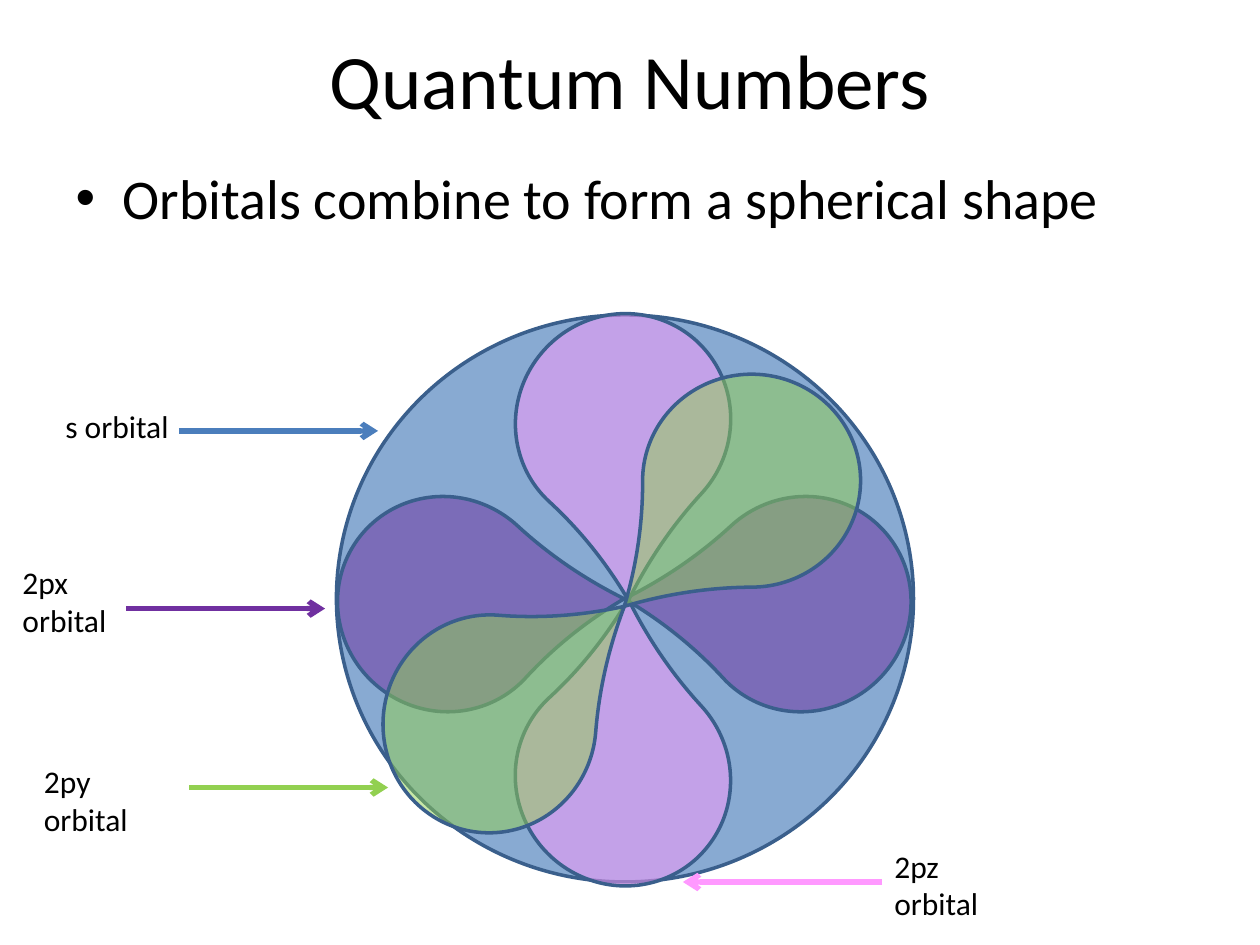
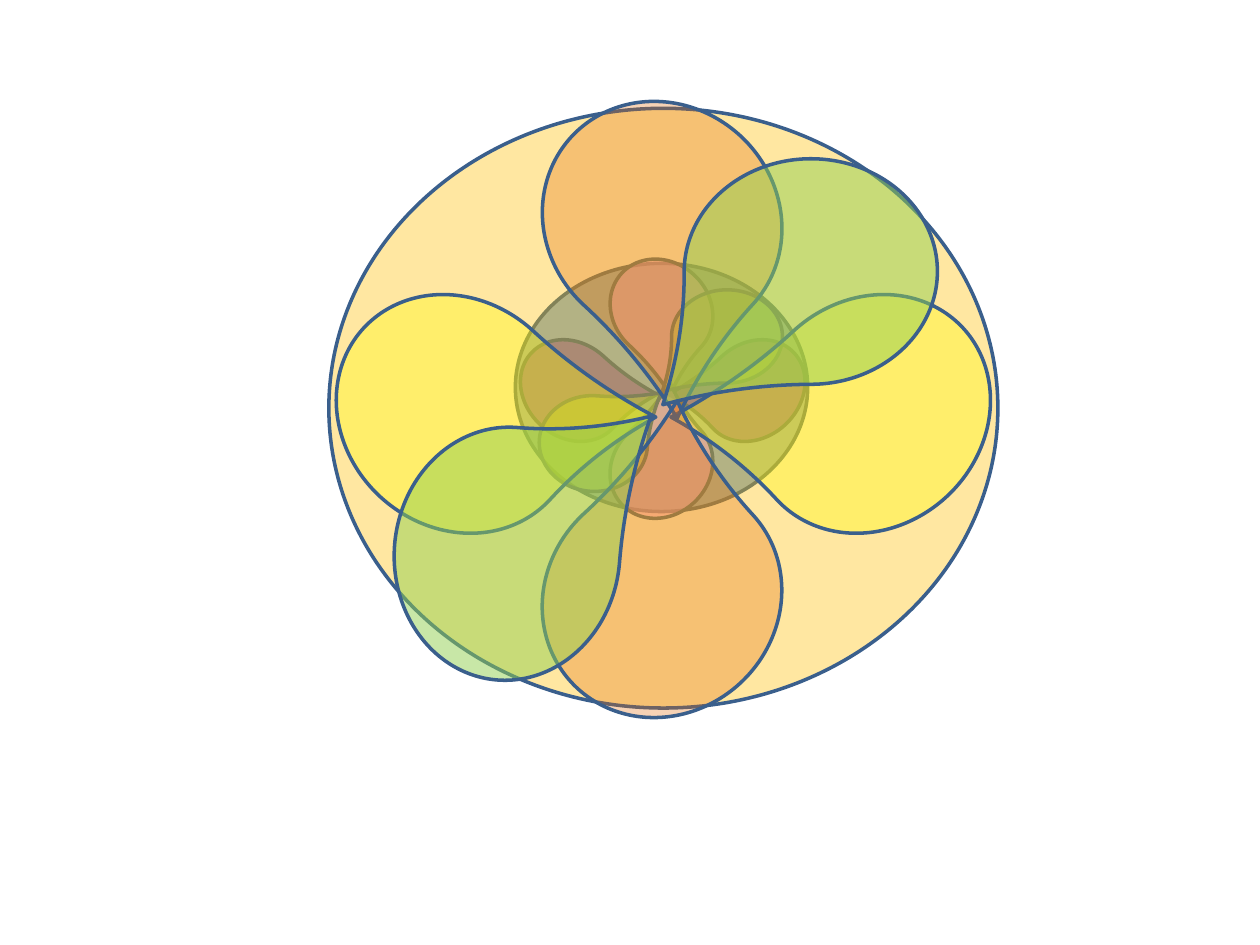
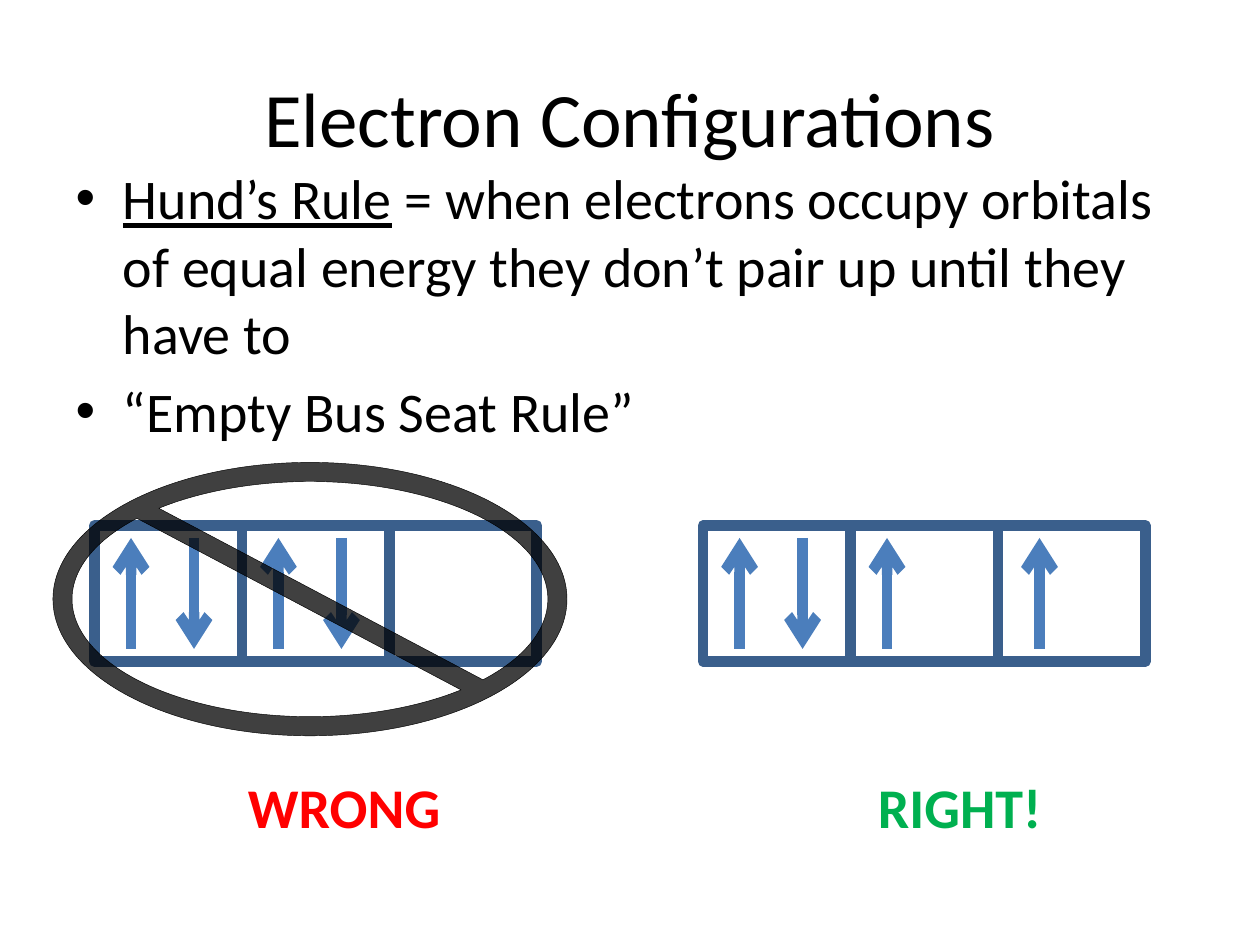
from lxml import etree
from pptx import Presentation
from pptx.dml.color import RGBColor
from pptx.enum.shapes import MSO_CONNECTOR, MSO_SHAPE
from pptx.enum.text import MSO_ANCHOR, PP_ALIGN
from pptx.oxml.ns import qn
from pptx.util import Inches, Pt

ELLIPSE = MSO_SHAPE.OVAL
TEARDROP = MSO_SHAPE.TEAR
RECTANGLE = MSO_SHAPE.RECTANGLE
NO_SYMBOL = MSO_SHAPE.NO_SYMBOL
STRAIGHT = MSO_CONNECTOR.STRAIGHT
CENTER = PP_ALIGN.CENTER
MIDDLE = MSO_ANCHOR.MIDDLE

FONT = "Calibri"
COLORS = {
    "black": "000000", "white": "FFFFFF", "outline": "3A5F8C",
    "blue": "4F81BD", "arrow": "4B7EBC", "purple": "7030A0",
    "pink": "FF99FF", "green": "92D050", "gold": "FFC000",
    "yellow": "FFFF00", "orange": "E46C0A", "wrong": "FF0000",
    "right": "00B050",
}
LOBE_TURNS = {"x": (42.6, 317.4), "z": (132.6, 47.4), "y": (179.7, 94.6)}
CONTENT_LAYOUT, BLANK_LAYOUT = 1, 6


def rgb(name):
    return RGBColor.from_string(COLORS[name])


class SlideBuilder:
    def __init__(self, deck):
        self.deck = deck
        self.page = None

    def new_page(self, layout):
        self.page = self.deck.slides.add_slide(self.deck.slide_layouts[layout])

    def format_span(self, span, size, color="black", bold=None):
        span.font.name = FONT
        span.font.size = Pt(size)
        span.font.color.rgb = rgb(color)
        span.font.bold = bold

    def place(self, item, left, top, width, height):
        item.left, item.top = Inches(left), Inches(top)
        item.width, item.height = Inches(width), Inches(height)

    def title(self, text, top):
        box = self.page.shapes.title
        self.place(box, 0.5, top, 9, 1.25)
        box.text_frame.text = text
        box.text_frame.vertical_anchor = MIDDLE
        para = box.text_frame.paragraphs[0]
        para.alignment = CENTER
        self.format_span(para.runs[0], 44)

    def bullets(self, items, height):
        box = self.page.placeholders[1]
        self.place(box, 0.5, 1.25, 9, height)
        frame = box.text_frame
        for index, (term, text) in enumerate(items):
            para = frame.add_paragraph() if index else frame.paragraphs[0]
            for part in filter(None, (term, text)):
                span = para.add_run()
                span.text = part
                self.format_span(span, 32)
                if part == term:
                    span.font.underline = True

    def label(self, text, left, top, width, height, size=18, color="black", bold=None):
        box = self.page.shapes.add_textbox(
            Inches(left), Inches(top), Inches(width), Inches(height))
        box.text_frame.word_wrap = True
        box.text_frame.text = text
        self.format_span(box.text_frame.paragraphs[0].runs[0], size, color, bold)

    def shape(self, kind, area, fill, opacity=100, line="outline", weight=2):
        shape = self.page.shapes.add_shape(kind, *map(Inches, area))
        shape.shadow.inherit = False
        shape.fill.solid()
        shape.fill.fore_color.rgb = rgb(fill)
        if opacity < 100:
            tint = shape.element.spPr.find(".//" + qn("a:srgbClr"))
            etree.SubElement(tint, qn("a:alpha")).set("val", str(opacity * 1000))
        shape.line.color.rgb = rgb(line)
        shape.line.width = Pt(weight)
        return shape

    def arrow(self, start, end, color, weight):
        arrow = self.page.shapes.add_connector(
            STRAIGHT, *map(Inches, start + end))
        arrow.line.color.rgb = rgb(color)
        arrow.line.width = Pt(weight)
        line = arrow.line._get_or_add_ln()
        etree.SubElement(line, qn("a:tailEnd")).set("type", "arrow")
        etree.SubElement(arrow.element.spPr, qn("a:effectLst"))

    def orbital(self, axis, corners, sizes, color, opacity=50):
        for index, corner in enumerate(corners):
            lobe = self.shape(TEARDROP, corner + sizes[index], color, opacity)
            lobe.adjustments[0] = 1.174
            lobe.rotation = LOBE_TURNS[axis][index]
            if index:
                lobe.element.spPr.find(qn("a:xfrm")).set("flipH", "1")

    def atom(self, sphere, color, opacity, orbitals):
        self.shape(ELLIPSE, sphere, color, opacity)
        for orbital in orbitals:
            self.orbital(*orbital)

    def electron_boxes(self, left, electrons):
        width, top, height = 1.17, 4.17, 1.08
        for index, offsets in enumerate(electrons):
            box_left = left + index * width
            self.shape(RECTANGLE, (box_left, top, width, height), "white", weight=6)
            for position, offset in enumerate(offsets):
                low = (box_left + offset, 5.15)
                high = (box_left + offset, 4.27)
                start, end = (high, low) if position else (low, high)
                self.arrow(start, end, "arrow", 6)


def quantum_numbers(builder):
    builder.new_page(CONTENT_LAYOUT)
    builder.title("Quantum Numbers", 0)
    builder.bullets([("", "Orbitals combine to form a spherical shape")], 5.45)
    sizes = ((1.73, 1.69),) * 2
    builder.atom((2.67, 2.5, 4.58, 4.5), "blue", 67, [
        ("x", ((2.67, 3.95), (5.51, 3.95)), sizes, "purple"),
        ("z", ((4.08, 2.5), (4.08, 5.33)), sizes, "pink"),
        ("y", ((5.1, 2.97), (3.02, 4.9)), sizes, "green"),
    ])
    for start, end, height, color in (
        (1.42, 3, 3.42, "arrow"),
        (1, 2.58, 4.83, "purple"),
        (1.5, 3.08, 6.25, "green"),
        (7, 5.42, 7, "pink"),
    ):
        builder.arrow((start, height), (end, height), color, 3)
    builder.label("s orbital", 0.42, 3.18, 1.08, 0.4)
    for name, left, top in (("2px", 0.08, 4.42), ("2py", 0.25, 6), ("2pz", 7, 6.67)):
        builder.label(f"{name} orbital", left, top, 1.25, 0.71)


def nested_shells(builder):
    builder.new_page(BLANK_LAYOUT)
    wide, tall = (0.88, 0.74), (0.76, 0.86)
    builder.atom((4.09, 2.09, 2.32, 1.97), "blue", 67, [
        ("x", ((4.1, 2.73), (5.54, 2.73)), (wide, wide), "purple"),
        ("z", ((4.87, 2.03), (4.87, 3.28)), (tall, tall), "pink"),
        ("y", ((5.33, 2.3), (4.33, 3.09)), (wide, tall), "green"),
    ])
    wide, tall = (2.01, 1.79), (1.83, 1.96)
    builder.atom((2.61, 0.86, 5.31, 4.76), "gold", 37, [
        ("x", ((2.62, 2.39), (5.9, 2.39)), (wide, wide), "yellow", 33),
        ("z", ((4.34, 0.77), (4.34, 3.77)), (tall, tall), "orange", 30),
        ("y", ((5.43, 1.26), (3.02, 3.5)), (wide, wide), "green"),
    ])


def electron_configurations(builder):
    builder.new_page(CONTENT_LAYOUT)
    builder.title("Electron Configurations", 0.3)
    builder.bullets([
        ("Hund’s Rule", " = when electrons occupy orbitals of equal energy "
                        "they don’t pair up until they have to"),
        ("", "“Empty Bus Seat Rule”"),
    ], 5.92)
    pair = (0.29, 0.79)
    builder.electron_boxes(0.75, (pair, pair, ()))
    builder.electron_boxes(5.58, (pair, (0.29,), (0.33,)))
    ban = builder.shape(NO_SYMBOL, (0.42, 3.67, 4.08, 2.17), "black", 75, "black", 0.25)
    ban.adjustments[0] = 0.07
    builder.label("WRONG", 1.87, 6.08, 2, 0.64, 32, "wrong", True)
    builder.label("RIGHT!", 6.87, 6.08, 2, 0.64, 32, "right", True)


def main():
    deck = Presentation()
    deck.slide_width, deck.slide_height = Inches(10), Inches(7.5)
    builder = SlideBuilder(deck)
    quantum_numbers(builder)
    nested_shells(builder)
    electron_configurations(builder)
    deck.save("out.pptx")


if __name__ == "__main__":
    main()
